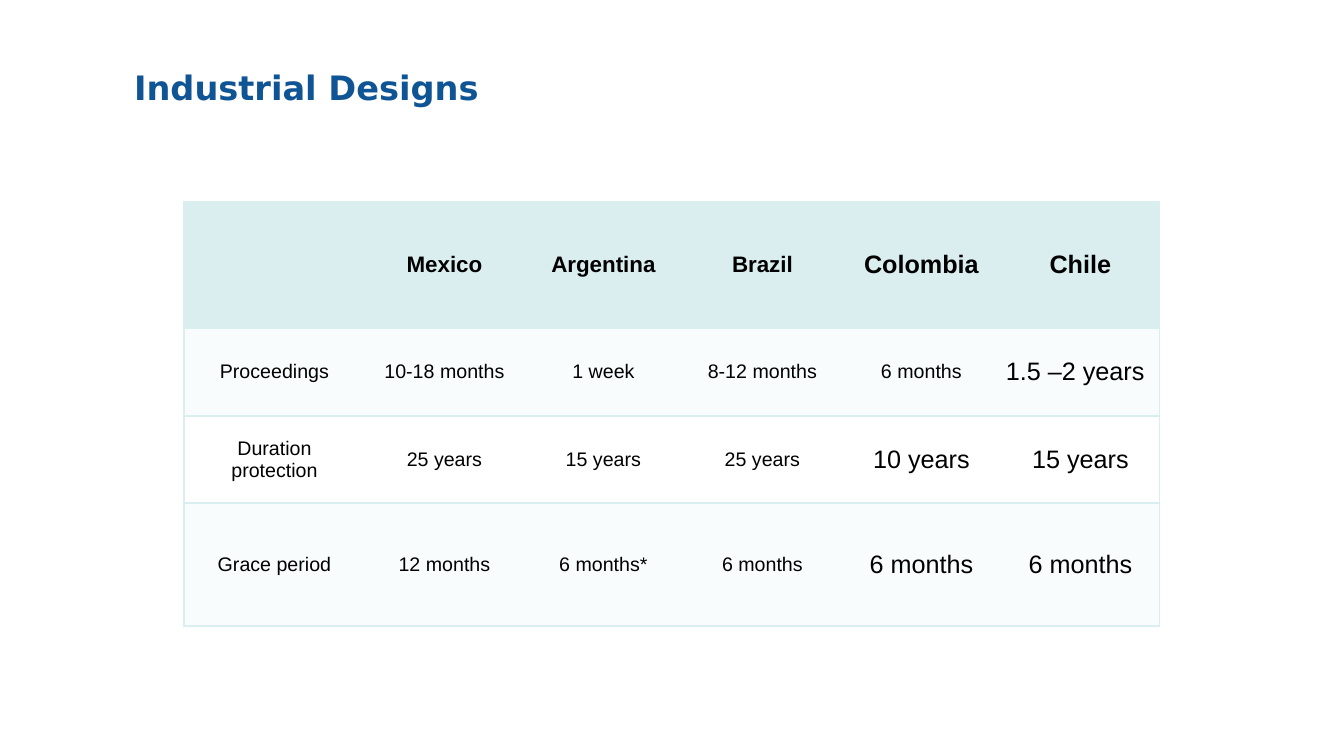
from lxml import etree
from pptx import Presentation
from pptx import util as u
from pptx.dml.color import RGBColor
from pptx.enum import text
from pptx.oxml import ns

BLUE = RGBColor(0x0F, 0x54, 0x94)
BLACK = RGBColor(0, 0, 0)
TEAL = RGBColor(0xDA, 0xED, 0xEF)
PALE = RGBColor(0xF8, 0xFC, 0xFC)
WHITE = RGBColor(0xFF, 0xFF, 0xFF)

PX = 914400 / 100.8
PLAIN_TABLE = "{2D5ABB26-0587-4C30-8999-92F81FD0307C}"

COLUMNS = [181] + [159] * 5
HEIGHTS = [126, 88, 87, 123]
FILLS = [TEAL, PALE, WHITE, PALE]
ROWS = [
    ["", "Mexico", "Argentina", "Brazil", "Colombia", "Chile"],
    ["Proceedings", "10-18 months", "1 week", "8-12 months", "6 months", "1.5 –2 years"],
    ["Duration protection", "25 years", "15 years", "25 years", "10 years", "15 years"],
    ["Grace period", "12 months", "6 months*", "6 months", "6 months", "6 months"],
]
SMALL_SIZES = [16, 14, 14, 14]
FIRST_LARGE_COLUMN = [4, 5, 4, 4]
LARGE_SIZE = 18


def px(length):
    return u.Emu(round(length * PX))


class SlideBuilder:
    """Holds the fonts and the current slide, and adds its elements."""

    title_font = "DejaVu Sans"
    table_font = "Arial"

    def __init__(self, presentation):
        self.slide = presentation.slides.add_slide(presentation.slide_layouts[5])

    def add_run(self, paragraph, wording, font, size, color, bold):
        run = paragraph.add_run()
        run.text = wording
        run.font.name = font
        run.font.size = u.Pt(size)
        run.font.color.rgb = color
        run.font.bold = bold

    def add_title(self, wording, left, top, width, height):
        shape = self.slide.shapes.title
        shape.left, shape.top = px(left), px(top)
        shape.width, shape.height = px(width), px(height)
        frame = shape.text_frame
        frame.word_wrap = True
        frame.auto_size = text.MSO_AUTO_SIZE.NONE
        frame.vertical_anchor = text.MSO_ANCHOR.MIDDLE
        paragraph = frame.paragraphs[0]
        paragraph.alignment = text.PP_ALIGN.LEFT
        properties = paragraph._p.get_or_add_pPr()
        properties.set("marL", str(px(39)))
        properties.set("indent", str(px(-39)))
        self.add_run(paragraph, wording, self.title_font, 24, BLUE, True)

    def add_borders(self, cell, sides):
        properties = cell._tc.get_or_add_tcPr()
        for side in sides:
            line = etree.SubElement(properties, ns.qn(f"a:ln{side}"), w=str(u.Pt(1)))
            fill = etree.SubElement(line, ns.qn("a:solidFill"))
            etree.SubElement(fill, ns.qn("a:srgbClr"), val=str(TEAL))

    def add_cell(self, cell, wording, size, bold, fill, sides):
        self.add_borders(cell, sides)
        cell.fill.solid()
        cell.fill.fore_color.rgb = fill
        cell.vertical_anchor = text.MSO_ANCHOR.MIDDLE
        if wording:
            paragraph = cell.text_frame.paragraphs[0]
            paragraph.alignment = text.PP_ALIGN.CENTER
            self.add_run(paragraph, wording, self.table_font, size, BLACK, bold)

    def add_table(self, left, top):
        frame = self.slide.shapes.add_table(
            len(ROWS), len(COLUMNS), px(left), px(top), px(sum(COLUMNS)), px(sum(HEIGHTS))
        )
        table = frame.table
        table._tbl.tblPr.find(ns.qn("a:tableStyleId")).text = PLAIN_TABLE
        table.horz_banding = False
        for column, width in zip(table.columns, COLUMNS):
            column.width = px(width)
        last = len(COLUMNS) - 1
        for i, wordings in enumerate(ROWS):
            table.rows[i].height = px(HEIGHTS[i])
            for j, wording in enumerate(wordings):
                sides = ("L" if j == 0 else "R" if j == last else "") + "TB"
                size = LARGE_SIZE if j >= FIRST_LARGE_COLUMN[i] else SMALL_SIZES[i]
                self.add_cell(table.cell(i, j), wording, size, i == 0, FILLS[i], sides)
        return table


def main():
    presentation = Presentation()
    presentation.slide_width, presentation.slide_height = px(1344), px(756)
    builder = SlideBuilder(presentation)
    builder.add_title("Industrial Designs", 124, 36, 1098, 103)
    table = builder.add_table(184, 202)
    chile_proceedings = table.cell(1, 5)
    chile_proceedings.margin_left = chile_proceedings.margin_right = px(5)
    chile_proceedings.margin_top = chile_proceedings.margin_bottom = 0
    chile_proceedings.text_frame.paragraphs[0].alignment = text.PP_ALIGN.LEFT
    presentation.save("out.pptx")


if __name__ == "__main__":
    main()
